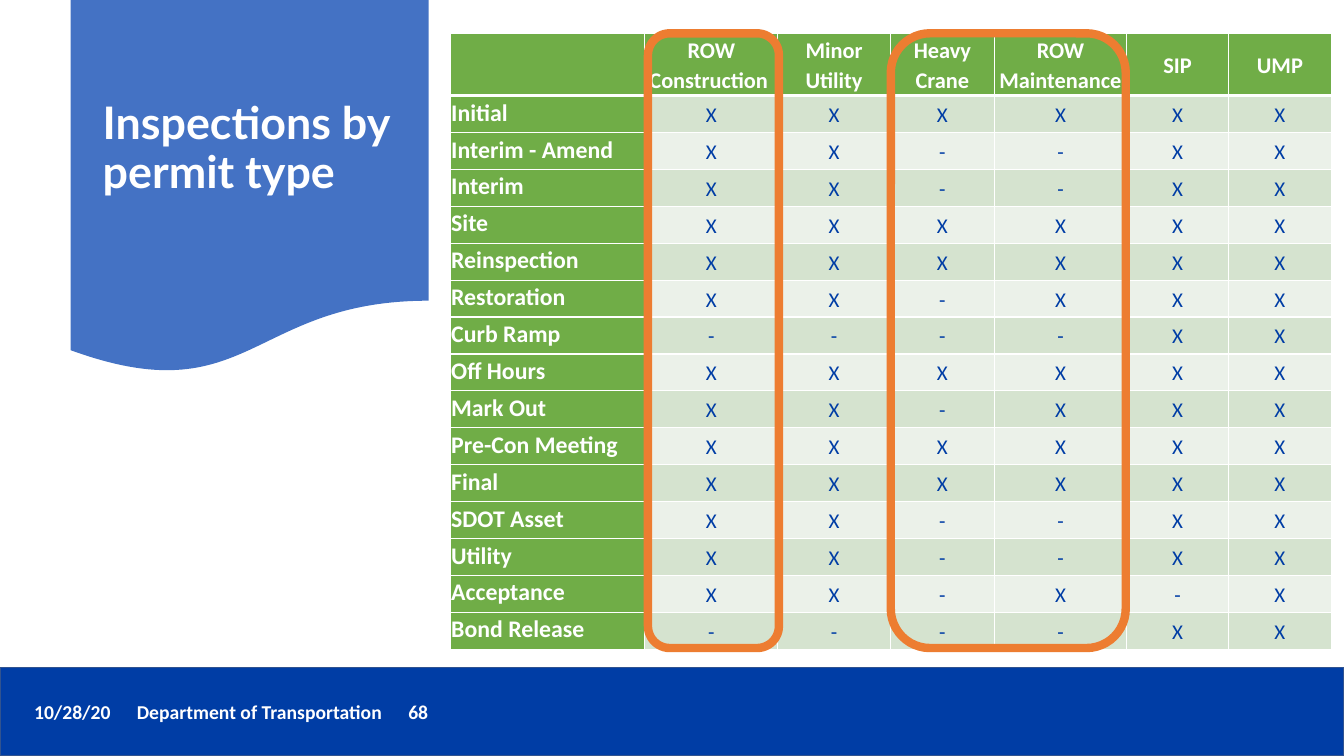
from dataclasses import dataclass

import lxml.etree
import pptx
import pptx.dml.color
import pptx.enum.shapes
import pptx.enum.text
import pptx.oxml.ns
import pptx.util

Cm = pptx.util.Cm
Pt = pptx.util.Pt
ANCHOR = pptx.enum.text.MSO_ANCHOR
ALIGN = pptx.enum.text.PP_ALIGN
PRESET = pptx.enum.shapes.MSO_SHAPE


@dataclass(frozen=True)
class Theme:
    """Colours, fonts and type sizes of the slide."""
    white: str = "FFFFFF"
    navy: str = "003DA5"
    navy_edge: str = "31538F"
    blue: str = "4472C4"
    green: str = "70AD47"
    bands: tuple = ("D5E3CF", "EBF1E9")
    orange: str = "ED7D31"
    title_font: str = "Lato"
    body_font: str = "Calibri"
    title_size: int = 32
    label_size: int = 17
    header_size: int = 16
    mark_size: int = 15
    footer_size: int = 14


THEME = Theme()
PERMITS = ["", "ROW Construction ", "Minor Utility", "Heavy Crane",
           "ROW Maintenance", "SIP", "UMP"]
INSPECTIONS = [
    ("Initial", "XXXXXX"),
    ("Interim - Amend", "XX--XX"),
    ("Interim", "XX--XX"),
    ("Site", "XXXXXX"),
    ("Reinspection", "XXXXXX"),
    ("Restoration", "XX-XXX"),
    ("Curb Ramp", "----XX"),
    ("Off Hours", "XXXXXX"),
    ("Mark Out", "XX-XXX"),
    ("Pre-Con Meeting", "XXXXXX"),
    ("Final", "XXXXXX"),
    ("SDOT Asset", "XX--XX"),
    ("Utility", "XX--XX"),
    ("Acceptance", "XX-X-X"),
    ("Bond Release", "----XX"),
]
COLUMN_WIDTHS = [4.9, 3.35, 2.84, 2.62, 3.33, 2.57, 2.59]
HEADER_HEIGHT, ROW_HEIGHT = 1.57, 0.93


def rgb(value):
    """Return the colour object for a hex value."""
    return pptx.dml.color.RGBColor.from_string(value)


def format_runs(paragraph, font, size, colour, bold):
    """Give every run of a paragraph the same type."""
    for run in paragraph.runs:
        run.font.name = font
        run.font.size = Pt(size)
        run.font.bold = bold
        run.font.color.rgb = rgb(colour)


def add_panel(slide, preset, box, fill=None, line=None, weight=1):
    """Add a preset shape with an optional fill and outline."""
    panel = slide.shapes.add_shape(preset, *map(Cm, box))
    panel.shadow.inherit = False
    if fill:
        panel.fill.solid()
        panel.fill.fore_color.rgb = rgb(fill)
    else:
        panel.fill.background()
    if line:
        panel.line.color.rgb = rgb(line)
        panel.line.width = Pt(weight)
    else:
        panel.line.fill.background()


def add_text(slide, box, words, font, size, anchor=ANCHOR.TOP):
    """Add a bold white text box and return its paragraph."""
    frame = slide.shapes.add_textbox(*map(Cm, box)).text_frame
    frame.word_wrap = True
    frame.vertical_anchor = anchor
    frame.text = words
    paragraph = frame.paragraphs[0]
    format_runs(paragraph, font, size, THEME.white, True)
    return paragraph


def set_tabs(paragraph, stops):
    """Set left tab stops on a paragraph."""
    tabs = lxml.etree.SubElement(paragraph._p.get_or_add_pPr(), pptx.oxml.ns.qn("a:tabLst"))
    for stop in stops:
        lxml.etree.SubElement(tabs, pptx.oxml.ns.qn("a:tab"), pos=str(Cm(stop)), algn="l")


def set_borders(cell, bottom):
    """Draw white cell borders with the given bottom weight."""
    properties = cell._tc.get_or_add_tcPr()
    weights = {"a:lnL": 1, "a:lnR": 1, "a:lnT": 1, "a:lnB": bottom}
    for tag, weight in weights.items():
        border = lxml.etree.SubElement(properties, pptx.oxml.ns.qn(tag), w=str(Pt(weight)))
        fill = lxml.etree.SubElement(border, pptx.oxml.ns.qn("a:solidFill"))
        lxml.etree.SubElement(fill, pptx.oxml.ns.qn("a:srgbClr"), val=THEME.white)


def fill_cell(cell, words, fill, size, colour, bold=True, label=False, bottom=1):
    """Write and style one table cell."""
    set_borders(cell, bottom)
    cell.fill.solid()
    cell.fill.fore_color.rgb = rgb(fill)
    cell.margin_left = cell.margin_right = cell.margin_top = Cm(0.02)
    cell.margin_bottom = 0
    cell.vertical_anchor = ANCHOR.TOP if label else ANCHOR.MIDDLE
    cell.text_frame.text = words
    paragraph = cell.text_frame.paragraphs[0]
    paragraph.alignment = ALIGN.LEFT if label else ALIGN.CENTER
    paragraph.line_spacing = 1.07
    format_runs(paragraph, THEME.body_font, size, colour, bold)


def add_inspection_table(slide):
    """Add the table of inspections by permit type."""
    height = HEADER_HEIGHT + ROW_HEIGHT * len(INSPECTIONS)
    table = slide.shapes.add_table(
        len(INSPECTIONS) + 1, len(PERMITS), Cm(11.35), Cm(0.84),
        Cm(sum(COLUMN_WIDTHS)), Cm(height)).table
    table.first_row = table.horz_banding = False
    for column, width in zip(table.columns, COLUMN_WIDTHS):
        column.width = Cm(width)
    for row in table.rows:
        row.height = Cm(ROW_HEIGHT)
    table.rows[0].height = Cm(HEADER_HEIGHT)
    for column, permit in enumerate(PERMITS):
        fill_cell(table.cell(0, column), permit, THEME.green, THEME.header_size,
                  THEME.white, bottom=3)
    for row, (inspection, marks) in enumerate(INSPECTIONS, 1):
        fill_cell(table.cell(row, 0), inspection, THEME.green, THEME.label_size,
                  THEME.white, label=True)
        for column, mark in enumerate(marks, 1):
            fill_cell(table.cell(row, column), mark, THEME.bands[(row - 1) % 2],
                      THEME.mark_size, THEME.navy, bold=False)


def main():
    """Build the slide and save it."""
    deck = pptx.Presentation()
    deck.slide_width, deck.slide_height = Cm(33.87), Cm(19.05)
    slide = deck.slides.add_slide(deck.slide_layouts[6])

    add_panel(slide, PRESET.RECTANGLE, (0, 16.82, 33.87, 2.23),
              THEME.navy, THEME.navy_edge)
    footer = add_text(slide, (0.61, 17.5, 25.55, 0.86),
                      "10/28/20\tDepartment of Transportation\t68",
                      THEME.body_font, THEME.footer_size)
    set_tabs(footer, (2.59, 9.43))

    add_panel(slide, PRESET.FLOWCHART_DOCUMENT, (1.78, 0, 9.02, 9.45), THEME.blue)
    title = add_text(slide, (2.34, 0.48, 7.9, 6.58), "Inspections by permit type",
                     THEME.title_font, THEME.title_size, ANCHOR.MIDDLE)
    title.line_spacing = 0.9

    add_inspection_table(slide)
    for left, width in ((16.33, 3.3), (22.45, 5.92)):
        add_panel(slide, PRESET.FLOWCHART_ALTERNATE_PROCESS, (left, 0.84, width, 15.49),
                  line=THEME.orange, weight=6)
    deck.save("out.pptx")


if __name__ == "__main__":
    main()
